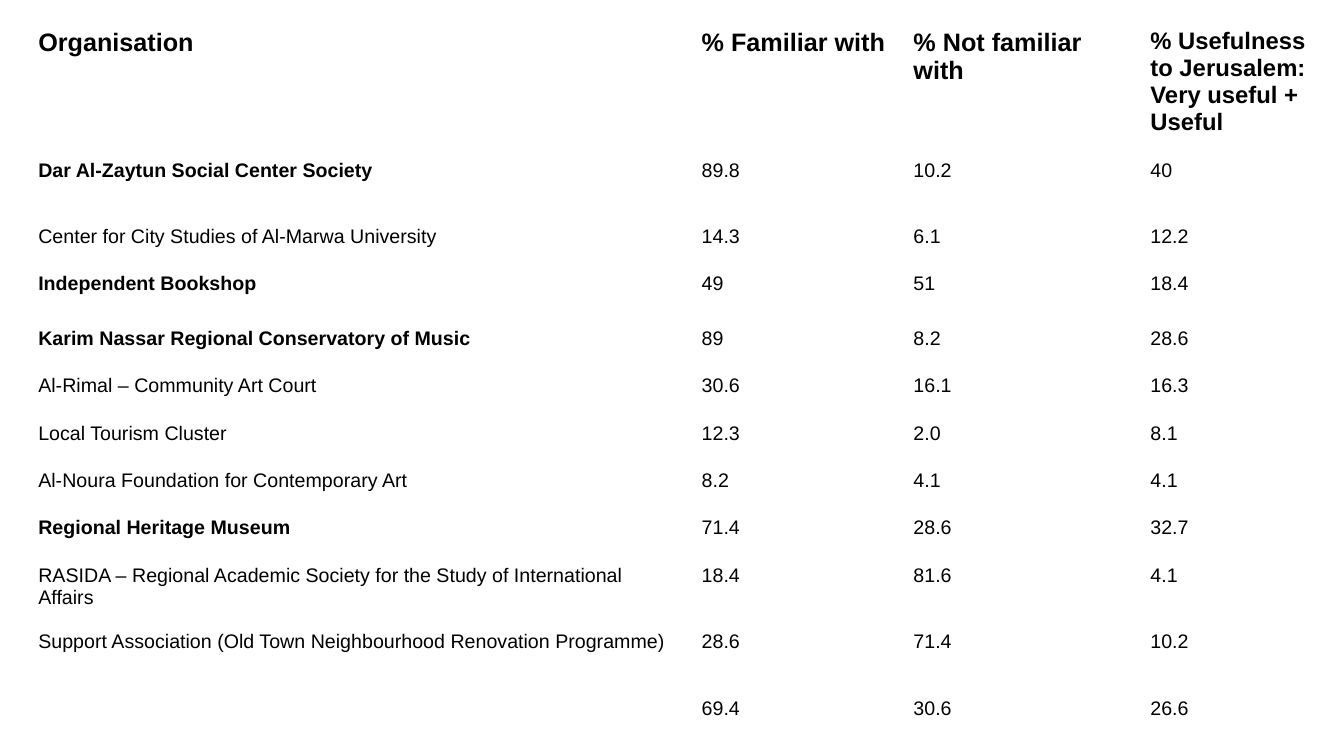
from lxml.etree import SubElement
from pptx import Presentation
from pptx.dml.color import RGBColor
from pptx.oxml.ns import qn
from pptx.util import Inches, Pt

FONT = "Arial"
WHITE, BLACK = "FFFFFF", "000000"
COL_WIDTHS = [6.58, 2.1, 2.35, 1.94]
ROW_HEIGHTS = [1.3, 0.66, 0.47, 0.54] + [0.47] * 5 + [0.66, 0.66, 0.53]

# Heading text and size
HEADINGS = [
    ("Organisation", 18),
    ("% Familiar with", 18),
    ("% Not familiar with", 18),
    ("% Usefulness to Jerusalem: Very useful + Useful", 17),
]

# Organisation, familiar, not familiar, usefulness
ROWS = [
    ("Dar Al-Zaytun Social Center Society", "89.8", "10.2", "40"),
    ("Center for City Studies of Al-Marwa University", "14.3", "6.1", "12.2"),
    ("Independent Bookshop", "49", "51", "18.4"),
    ("Karim Nassar Regional Conservatory of Music", "89", "8.2", "28.6"),
    ("Al-Rimal – Community Art Court", "30.6", "16.1", "16.3"),
    ("Local Tourism Cluster", "12.3", "2.0", "8.1"),
    ("Al-Noura Foundation for Contemporary Art", "8.2", "4.1", "4.1"),
    ("Regional Heritage Museum", "71.4", "28.6", "32.7"),
    ("RASIDA – Regional Academic Society for the Study of International Affairs",
     "18.4", "81.6", "4.1"),
    ("Support Association (Old Town Neighbourhood Renovation Programme)",
     "28.6", "71.4", "10.2"),
    ("", "69.4", "30.6", "26.6"),
]
BOLD_ROWS = {0, 2, 3, 7}


def rgb(color):
    return RGBColor.from_string(color)


def set_borders(cell, color, bottom=1):
    tcPr = cell._tc.get_or_add_tcPr()
    for side, width in (("L", 1), ("R", 1), ("T", 1), ("B", bottom)):
        ln = SubElement(tcPr, qn(f"a:ln{side}"), w=str(Pt(width)))
        fill = SubElement(ln, qn("a:solidFill"))
        SubElement(fill, qn("a:srgbClr"), val=color)


def fill_cell(cell, text, size, bold=False, bottom=1):
    set_borders(cell, WHITE, bottom)
    cell.fill.solid()
    cell.fill.fore_color.rgb = rgb(WHITE)
    cell.margin_left = cell.margin_right = Inches(0.1)
    cell.margin_top = cell.margin_bottom = Inches(0.05)
    p = cell.text_frame.paragraphs[0]
    p.text = text
    p.font.name = FONT
    p.font.size = Pt(size)
    p.font.bold = bold
    p.font.color.rgb = rgb(BLACK)


def add_survey_table(s):
    table = s.shapes.add_table(
        len(ROW_HEIGHTS), len(COL_WIDTHS), Inches(0.28), Inches(0.23),
        Inches(sum(COL_WIDTHS)), Inches(sum(ROW_HEIGHTS))).table
    table.first_row = table.horz_banding = False
    for column, width in zip(table.columns, COL_WIDTHS):
        column.width = Inches(width)
    for row, height in zip(table.rows, ROW_HEIGHTS):
        row.height = Inches(height)

    # Heading row
    for c, (text, size) in enumerate(HEADINGS):
        fill_cell(table.cell(0, c), text, size, bold=True, bottom=3)

    # Survey results
    for r, values in enumerate(ROWS):
        for c, text in enumerate(values):
            fill_cell(table.cell(r + 1, c), text, 14,
                      bold=c == 0 and r in BOLD_ROWS)


def main():
    prs = Presentation()
    prs.slide_width, prs.slide_height = Inches(13.33), Inches(7.5)
    s = prs.slides.add_slide(prs.slide_layouts[6])
    add_survey_table(s)
    prs.save("out.pptx")


if __name__ == "__main__":
    main()
